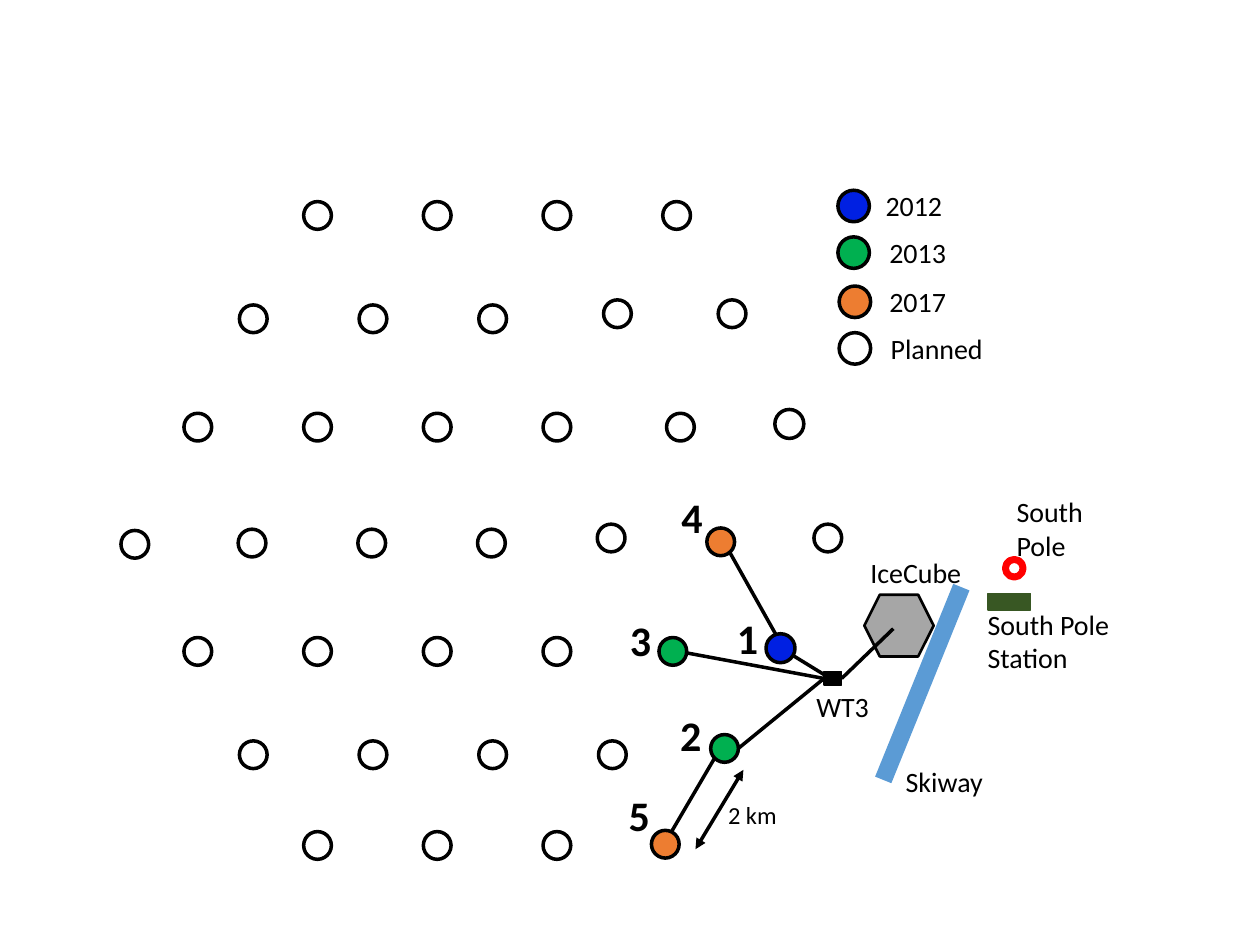
import pptx
import pptx.util
import pptx.dml.color
import pptx.enum.shapes
import pptx.enum.text
import pptx.oxml.ns
from lxml import etree

Inches = pptx.util.Inches
Pt = pptx.util.Pt
SHAPES = pptx.enum.shapes.MSO_SHAPE

COLORS = {
    "ink": "000000",
    "planned": "FFFFFF",
    "2012": "0020E2",
    "2013": "00B050",
    "2017": "ED7D31",
    "skiway": "5B9BD5",
    "lab": "A6A6A6",
    "base": "385723",
    "pole": "FF0000",
}


class StationMap:
    """Holds the map style and the slide being drawn; lengths are inches."""

    font = "Calibri"
    label_size = 16
    line_width = 2

    def __init__(self, slide):
        self.slide = slide

    def rgb(self, color):
        return pptx.dml.color.RGBColor.from_string(COLORS[color])

    def shape(self, kind, left, top, width, height, fill, line="ink", weight=line_width):
        shape = self.slide.shapes.add_shape(
            kind, Inches(left), Inches(top), Inches(width), Inches(height))
        shape.shadow.inherit = False
        if fill:
            shape.fill.solid()
            shape.fill.fore_color.rgb = self.rgb(fill)
        else:
            shape.fill.background()
        shape.line.color.rgb = self.rgb(line)
        shape.line.width = Pt(weight)
        return shape

    def station(self, left, top, fill="planned", size=0.22):
        return self.shape(SHAPES.OVAL, left, top, size, size, fill)

    def label(self, text, left, top, width, height=0.37, size=label_size, bold=False):
        box = self.slide.shapes.add_textbox(
            Inches(left), Inches(top), Inches(width), Inches(height))
        frame = box.text_frame
        frame.word_wrap = True
        frame.auto_size = pptx.enum.text.MSO_AUTO_SIZE.SHAPE_TO_FIT_TEXT
        frame.text = text
        font = frame.paragraphs[0].runs[0].font
        font.name = self.font
        font.size = Pt(size)
        font.bold = bold
        font.color.rgb = self.rgb("ink")

    def line(self, start, end, color="ink", weight=line_width, arrows=False):
        line = self.slide.shapes.add_connector(
            pptx.enum.shapes.MSO_CONNECTOR.STRAIGHT,
            Inches(start[0]), Inches(start[1]), Inches(end[0]), Inches(end[1]))
        line.line.color.rgb = self.rgb(color)
        line.line.width = Pt(weight)
        qn = pptx.oxml.ns.qn
        properties = line._element.spPr
        if arrows:
            outline = properties.find(qn("a:ln"))
            for end_tag in ("a:headEnd", "a:tailEnd"):
                etree.SubElement(outline, qn(end_tag), type="triangle")
        etree.SubElement(properties, qn("a:effectLst"))
        return line


def draw_planned_stations(site):
    pitch = 0.95
    rows = [  # first left, top, count
        (2.41, 1.6, 4),
        (1.9, 2.42, 3),
        (1.46, 3.28, 4),
        (1.89, 4.2, 3),
        (1.46, 5.06, 4),
        (1.9, 5.88, 4),
        (2.41, 6.6, 3),
    ]
    for first_left, top, count in rows:
        for column in range(count):
            site.station(first_left + column * pitch, top)
    off_grid = [(4.79, 2.38), (5.7, 2.38), (5.29, 3.28),
                (0.96, 4.21), (4.74, 4.16), (6.46, 4.16)]
    for left, top in off_grid:
        site.station(left, top)
    site.station(6.15, 3.25, size=0.23)


def draw_deployed_stations(site):
    stations = [  # number, year, left, top, size, label left, label top, label width
        ("1", "2012", 6.08, 5.03, 0.23, 5.75, 4.81, 0.43),
        ("2", "2013", 5.64, 5.83, 0.22, 5.3, 5.58, 0.34),
        ("3", "2013", 5.23, 5.06, 0.22, 4.9, 4.83, 0.34),
        ("4", "2017", 5.61, 4.19, 0.22, 5.31, 3.85, 0.34),
        ("5", "2017", 5.17, 6.59, 0.22, 4.89, 6.22, 0.34),
    ]
    for number, year, left, top, size, label_left, label_top, width in stations:
        site.station(left, top, year, size)
        site.label(number, label_left, label_top, width, 0.44, size=24, bold=True)
    site.line((5.52, 6.74), (5.9, 6.11), arrows=True)
    site.label("2 km", 5.68, 6.3, 1, 0.34, size=14)


def draw_facilities(site):
    site.line((7.63, 4.66), (7.01, 6.19), "skiway", 10)
    site.label("Skiway", 7.09, 6.02, 1.03)
    site.shape(SHAPES.HEXAGON, 6.86, 4.72, 0.55, 0.49, "lab", weight=1.5)
    site.label("IceCube", 6.81, 4.36, 1.03)
    site.shape(SHAPES.RECTANGLE, 7.84, 4.71, 0.34, 0.13, "base", "base", 1)
    site.label("South Pole Station", 7.74, 4.77, 1.35, 0.64)
    site.shape(SHAPES.OVAL, 7.98, 4.44, 0.14, 0.14, None, "pole", 4)
    site.label("South Pole", 7.97, 3.88, 0.83, 0.64)


def draw_cables(site):
    hub = site.shape(SHAPES.RECTANGLE, 6.54, 5.33, 0.14, 0.11, "ink", weight=1)
    site.label("WT3", 6.38, 5.42, 0.98)
    hub_left, hub_right = (6.54, 5.39), (6.68, 5.39)
    site.line((7.09, 4.99), hub_right).end_connect(hub, 3)
    for station_edge in [(5.44, 5.18), (5.86, 5.94)]:
        site.line(hub_left, station_edge).begin_connect(hub, 1)
    for start, end in [((6.55, 5.36), (6.29, 5.2)),
                       ((5.79, 4.38), (6.16, 5.04)),
                       ((5.67, 6.02), (5.33, 6.6))]:
        site.line(start, end)


def draw_legend(site):
    entries = [  # text, fill, marker left, marker top, text left, text width
        ("2012", "2012", 6.65, 1.51, 6.93, 0.92),
        ("2013", "2013", 6.65, 1.88, 6.96, 0.92),
        ("2017", "2017", 6.66, 2.27, 6.96, 0.92),
        ("Planned", None, 6.66, 2.64, 6.97, 1.12),
    ]
    for text, fill, left, top, text_left, width in entries:
        site.station(left, top, fill, 0.25)
        site.label(text, text_left, top - 0.06, width)


def main():
    deck = pptx.Presentation()
    deck.slide_width, deck.slide_height = Inches(10), Inches(7.5)
    blank_layout = deck.slide_layouts[6]
    site = StationMap(deck.slides.add_slide(blank_layout))
    draw_planned_stations(site)
    draw_deployed_stations(site)
    draw_facilities(site)
    draw_cables(site)
    draw_legend(site)
    deck.save("out.pptx")


if __name__ == "__main__":
    main()
